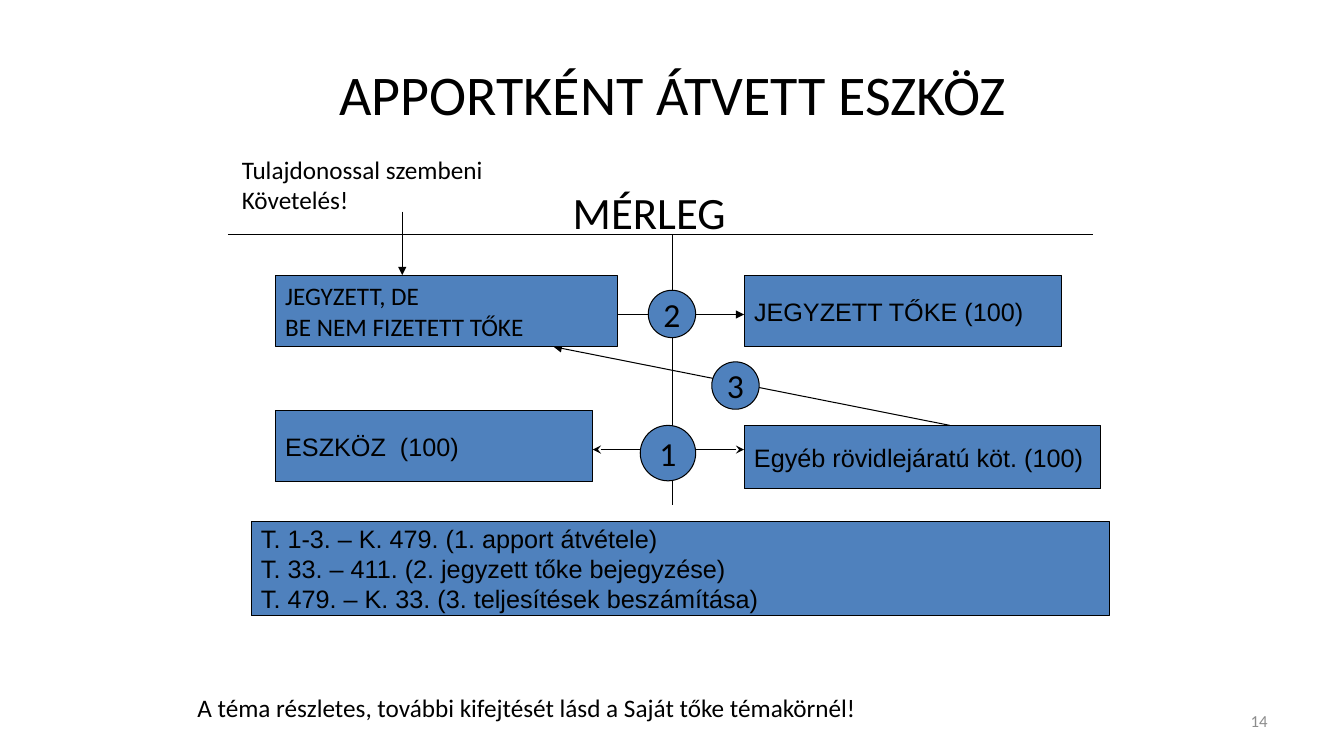
"""Build the balance sheet slide on assets received as a contribution in kind."""
from dataclasses import dataclass

from lxml import etree
from pptx import Presentation
from pptx import util as u
from pptx.dml.color import RGBColor
from pptx.enum import shapes, text
from pptx.oxml.ns import qn


@dataclass(frozen=True)
class Theme:
    ink: RGBColor = RGBColor(0x00, 0x00, 0x00)
    fill: RGBColor = RGBColor(0x4F, 0x81, 0xBD)
    muted: RGBColor = RGBColor(0x8C, 0x8C, 0x8C)
    heading_font: str = "Calibri"
    entry_font: str = "Arial"
    title: int = 40
    heading: int = 32
    badge: int = 24
    body: int = 18
    small: int = 12
    line: float = 0.75


theme = Theme()
LEFT, CENTER, RIGHT = text.PP_ALIGN.LEFT, text.PP_ALIGN.CENTER, text.PP_ALIGN.RIGHT
TOP, MIDDLE = text.MSO_ANCHOR.TOP, text.MSO_ANCHOR.MIDDLE
RECTANGLE, OVAL = shapes.MSO_SHAPE.RECTANGLE, shapes.MSO_SHAPE.OVAL


def write(box, lines, font, size, align=LEFT, anchor=MIDDLE, color=theme.ink, wrap=True):
    """Fill a box with one paragraph per line."""
    frame = box.text_frame
    frame.word_wrap = wrap
    frame.vertical_anchor = anchor
    frame.text = "\n".join(lines)
    for para in frame.paragraphs:
        para.alignment = align
        para.font.name = font
        para.font.size = u.Pt(size)
        para.font.color.rgb = color


def outlined(kind, left, top, width, height):
    """Add a filled shape with a thin outline."""
    shape = page.shapes.add_shape(kind, *map(u.Inches, (left, top, width, height)))
    shape.shadow.inherit = False
    shape.fill.solid()
    shape.fill.fore_color.rgb = theme.fill
    shape.line.color.rgb = theme.ink
    shape.line.width = u.Pt(theme.line)
    return shape


deck = Presentation()
deck.slide_width, deck.slide_height = u.Inches(13.33), u.Inches(7.5)
page = deck.slides.add_slide(deck.slide_layouts[6])

labels = [
    ((0.67, 0.3, 12, 1.25), ["APPORTKÉNT ÁTVETT ESZKÖZ"], theme.title, CENTER, MIDDLE, theme.ink),
    ((5.19, 1.78, 2.5, 0.65), ["MÉRLEG"], theme.heading, CENTER, TOP, theme.ink),
    ((2.3, 1.48, 2.62, 0.71), ["Tulajdonossal szembeni", "Követelés!"],
     theme.body, LEFT, TOP, theme.ink),
    ((1.86, 6.82, 6.8, 0.4), ["A téma részletes, további kifejtését lásd a Saját tőke témakörnél!"],
     theme.body, LEFT, TOP, theme.ink),
    ((9.56, 6.95, 3.11, 0.4), ["14"], theme.small, RIGHT, MIDDLE, theme.muted),
]
for place, lines, size, align, anchor, color in labels:
    label = page.shapes.add_textbox(*map(u.Inches, place))
    write(label, lines, theme.heading_font, size, align, anchor, color)

connectors = [
    ((2.26, 2.33), (10.84, 2.33), {}),
    ((6.67, 2.33), (6.67, 5.01), {}),
    ((5.88, 4.46), (7.38, 4.46), {"headEnd": "stealth", "tailEnd": "stealth"}),
    ((9.42, 4.22), (5.49, 3.44), {"tailEnd": "triangle"}),
    ((6.11, 3.12), (7.38, 3.12), {"tailEnd": "triangle"}),
    ((3.99, 2.1), (3.99, 2.73), {"tailEnd": "triangle"}),
]
for start, end, arrowheads in connectors:
    connector = page.shapes.add_connector(
        shapes.MSO_CONNECTOR.STRAIGHT, *map(u.Inches, start + end))
    connector.line.color.rgb = theme.ink
    connector.line.width = u.Pt(theme.line)
    outline = connector.line._get_or_add_ln()
    for tag, kind in arrowheads.items():
        etree.SubElement(outline, qn(f"a:{tag}"), type=kind)
    etree.SubElement(connector._element.spPr, qn("a:effectLst"))

entries = [
    ((2.73, 2.73, 3.39, 0.71), theme.heading_font, ["JEGYZETT, DE", "BE NEM FIZETETT TŐKE"]),
    ((7.38, 2.73, 3.15, 0.71), theme.entry_font, ["JEGYZETT TŐKE (100)"]),
    ((2.73, 4.07, 3.15, 0.71), theme.entry_font, ["ESZKÖZ  (100)"]),
    ((7.38, 4.22, 3.54, 0.63), theme.entry_font, ["Egyéb rövidlejáratú köt. (100)"]),
    ((2.49, 5.17, 8.51, 0.94), theme.entry_font, [
        "T. 1-3. – K. 479. (1. apport átvétele)",
        "T. 33. – 411. (2. jegyzett tőke bejegyzése)",
        "T. 479. – K. 33. (3. teljesítések beszámítása)",
    ]),
]
for place, font, lines in entries:
    write(outlined(RECTANGLE, *place), lines, font, theme.body)

steps = [(6.35, 4.22, 0.55), (6.43, 2.88, 0.47), (7.06, 3.59, 0.47)]
for number, (left, top, diameter) in enumerate(steps, start=1):
    badge = outlined(OVAL, left, top, diameter, diameter)
    write(badge, [str(number)], theme.heading_font, theme.badge, CENTER, wrap=False)

deck.save("out.pptx")
